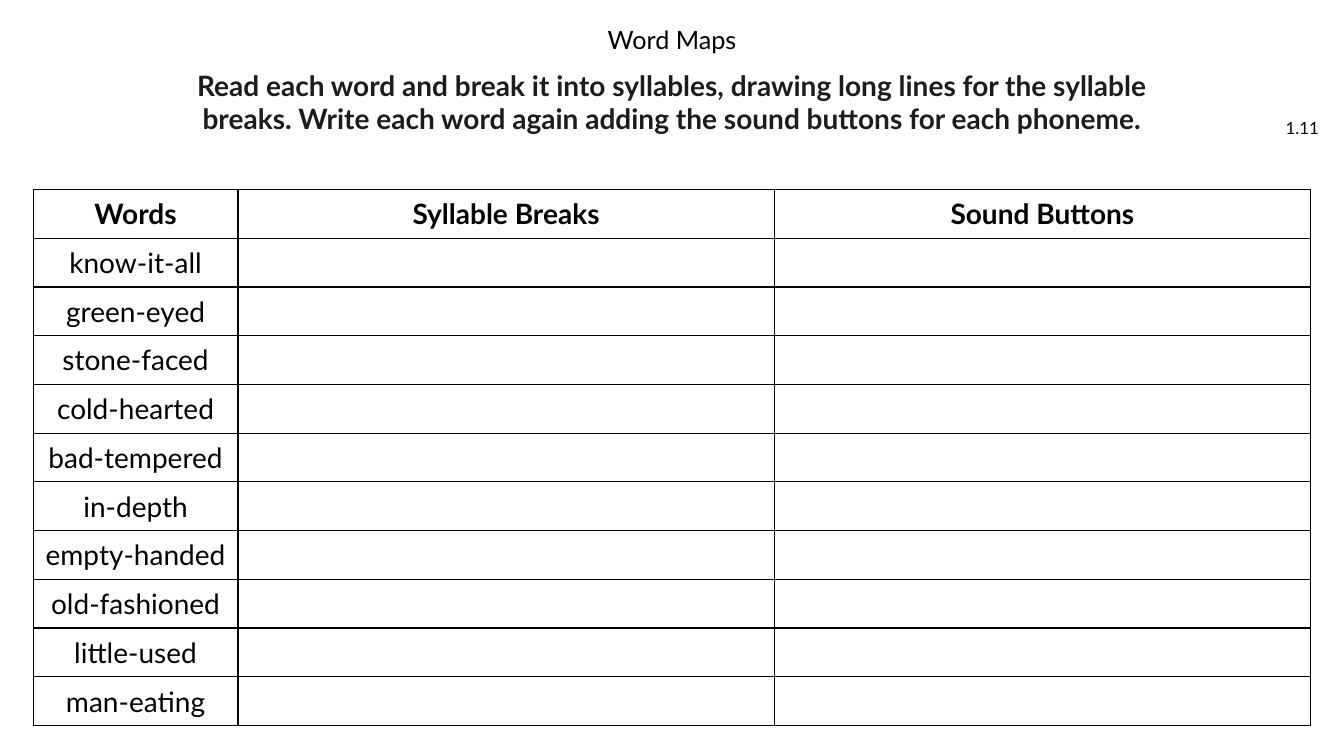
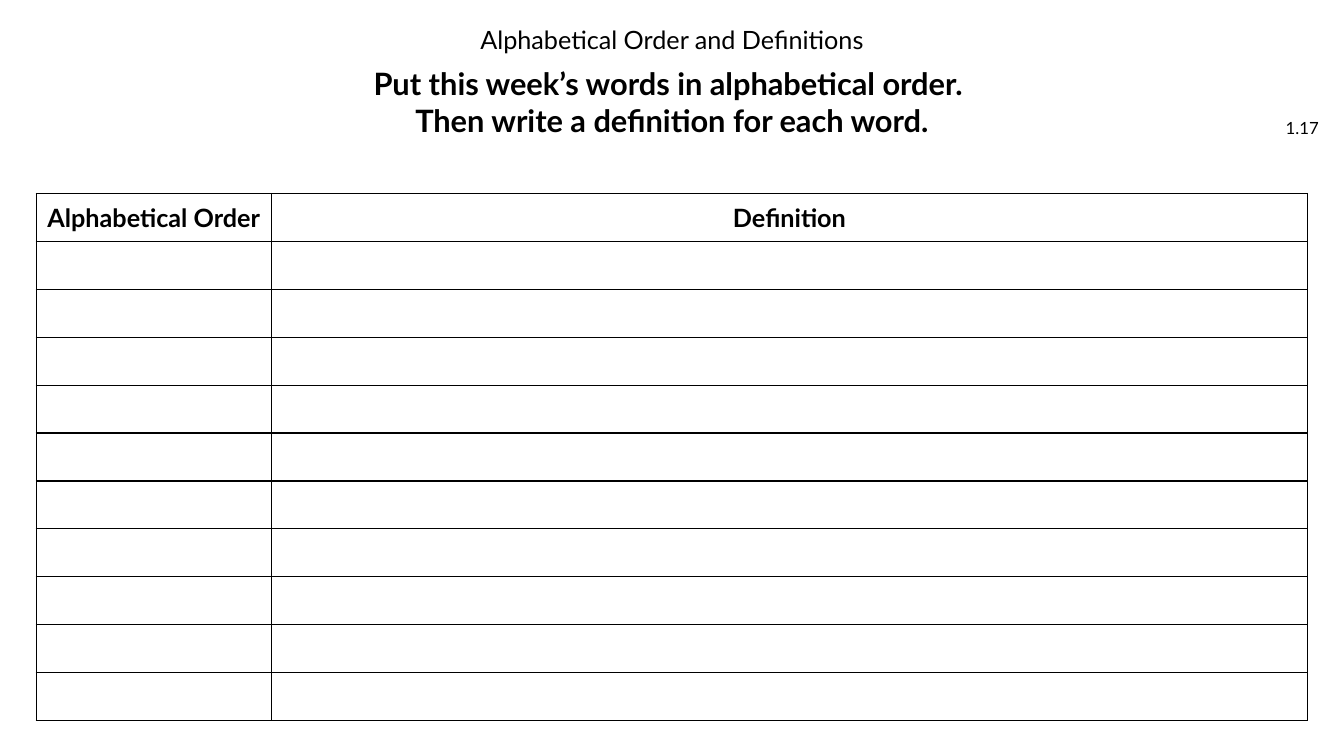
from lxml.etree import SubElement
from pptx import Presentation
from pptx.dml.color import RGBColor
from pptx.enum.text import MSO_ANCHOR, PP_ALIGN
from pptx.oxml.ns import qn
from pptx.util import Inches, Pt

COLORS = {"black": "000000", "charcoal": "1D1C1D", "white": "FFFFFF"}
FONT = "Lato"
SLIDE_WIDTH, SLIDE_HEIGHT = 13.33, 7.5
ROWS = 11
TITLE_BOX = (3.82, 0.23, 5.69, 0.35)
NUMBER_BOX = (12.55, 1.07, 0.63, 0.4)
TITLE = {"size": 18}
NUMBER = {"size": 12}

WORKSHEETS = [
    {
        "title": "Word Maps",
        "number": "1.11",
        "instructions": ["Read each word and break it into syllables, drawing long lines for the syllable "
                         "breaks. Write each word again adding the sound buttons for each phoneme."],
        "instruction_width": 9.87,
        "instruction_format": {"size": 20, "bold": True, "color": "charcoal"},
        "table_top": 1.88,
        "table_height": 5.32,
        "columns": {"Words": 2.03, "Syllable Breaks": 5.32, "Sound Buttons": 5.32},
        "cell_size": 20,
        "words": ["know-it-all", "green-eyed", "stone-faced", "cold-hearted", "bad-tempered",
                  "in-depth", "empty-handed", "old-fashioned", "little-used", "man-eating"],
    },
    {
        "title": "Alphabetical Order and Definitions",
        "number": "1.17",
        "instructions": ["Put this week’s words in alphabetical order. ",
                         "Then write a definition for each word."],
        "instruction_width": 9.4,
        "instruction_format": {"size": 22, "bold": True},
        "table_top": 1.92,
        "table_height": 5.23,
        "columns": {"Alphabetical Order": 2.33, "Definition": 10.28},
        "cell_size": 18,
        "words": [],
    },
]


def write_lines(frame, lines, size, bold=False, color="black", align=PP_ALIGN.CENTER):
    frame.text = "\n".join(lines)
    font_format = {"name": FONT, "size": Pt(size), "bold": bold}
    for paragraph in frame.paragraphs:
        paragraph.alignment = align
        for attribute, value in font_format.items():
            setattr(paragraph.font, attribute, value)
        paragraph.font.color.rgb = RGBColor.from_string(COLORS[color])


def style_cell(cell):
    """Give the cell a white fill, thin black borders and middle anchoring."""
    properties = cell._tc.get_or_add_tcPr()
    for side in ("a:lnL", "a:lnR", "a:lnT", "a:lnB"):
        line = SubElement(properties, qn(side), w=str(Pt(1)))
        fill = SubElement(line, qn("a:solidFill"))
        SubElement(fill, qn("a:srgbClr"), val=COLORS["black"])
    cell.fill.solid()
    cell.fill.fore_color.rgb = RGBColor.from_string(COLORS["white"])
    cell.vertical_anchor = MSO_ANCHOR.MIDDLE


presentation = Presentation()
presentation.slide_width = Inches(SLIDE_WIDTH)
presentation.slide_height = Inches(SLIDE_HEIGHT)
blank_layout = presentation.slide_layouts[6]

for sheet in WORKSHEETS:
    slide = presentation.slides.add_slide(blank_layout)

    width = sheet["instruction_width"]
    instruction_box = ((SLIDE_WIDTH - width) / 2, 0.6, width, 0.82)
    texts = [
        (NUMBER_BOX, [sheet["number"]], {**NUMBER, "align": PP_ALIGN.RIGHT}, MSO_ANCHOR.MIDDLE),
        (instruction_box, sheet["instructions"], sheet["instruction_format"], MSO_ANCHOR.MIDDLE),
        (TITLE_BOX, [sheet["title"]], TITLE, MSO_ANCHOR.TOP),
    ]
    for box, lines, text_format, anchor in texts:
        frame = slide.shapes.add_textbox(*map(Inches, box)).text_frame
        frame.word_wrap = True
        frame.vertical_anchor = anchor
        write_lines(frame, lines, **text_format)
    frame.paragraphs[0].line_spacing = 0.9  # the title comes last

    columns = sheet["columns"]
    table_width = sum(columns.values())
    table = slide.shapes.add_table(
        ROWS, len(columns), Inches((SLIDE_WIDTH - table_width) / 2), Inches(sheet["table_top"]),
        Inches(table_width), Inches(sheet["table_height"])).table
    for column, column_width in zip(table.columns, columns.values()):
        column.width = Inches(column_width)
    for cell in table.iter_cells():
        style_cell(cell)
        write_lines(cell.text_frame, [""], sheet["cell_size"])
    for column_index, heading in enumerate(columns):
        write_lines(table.cell(0, column_index).text_frame, [heading], sheet["cell_size"], bold=True)
    for row_index, word in enumerate(sheet["words"], start=1):
        write_lines(table.cell(row_index, 0).text_frame, [word], sheet["cell_size"])

presentation.save("out.pptx")
